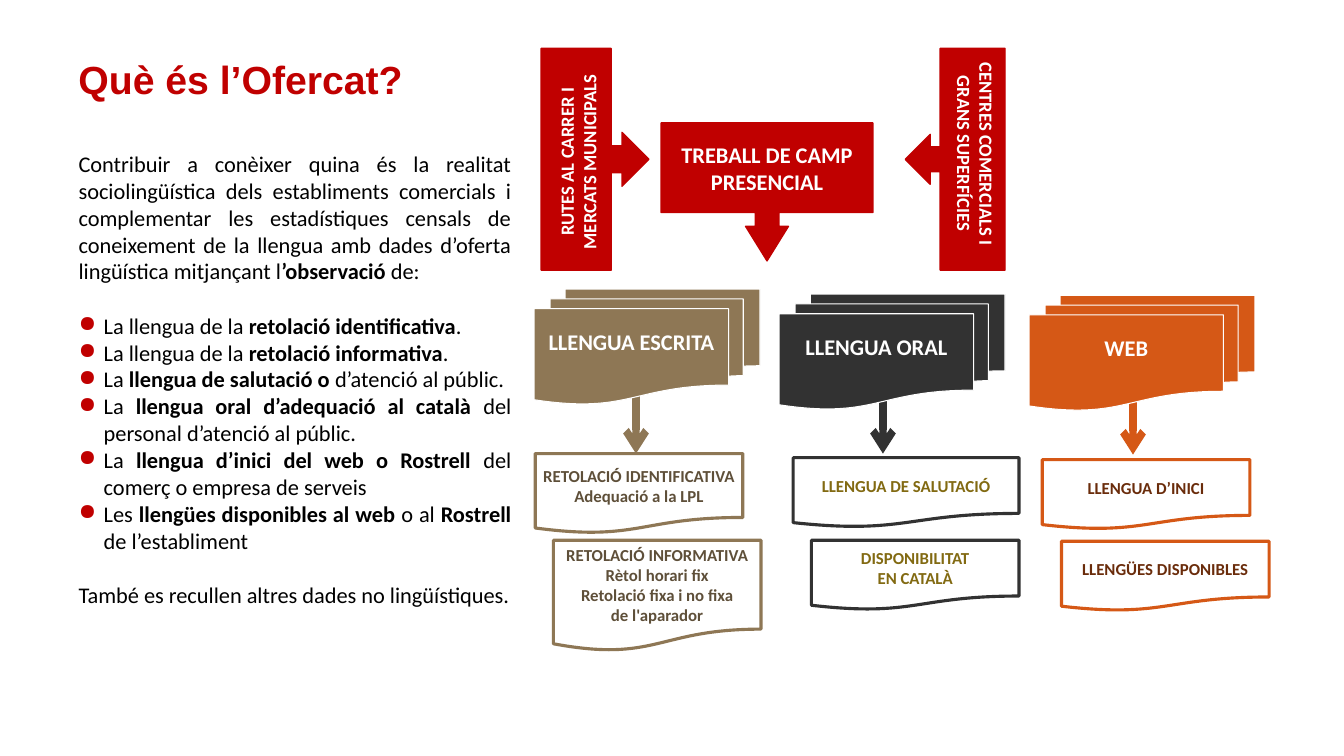
from dataclasses import dataclass

from lxml.etree import SubElement
from pptx import Presentation
from pptx.dml.color import RGBColor
from pptx.enum.shapes import MSO_CONNECTOR, MSO_SHAPE
from pptx.enum.text import MSO_ANCHOR, PP_ALIGN
from pptx.oxml.ns import qn
from pptx.util import Pt

RED = RGBColor(0xC0, 0x00, 0x00)
BLACK = RGBColor(0x00, 0x00, 0x00)
WHITE = RGBColor(0xFF, 0xFF, 0xFF)
BROWN = RGBColor(0x8E, 0x77, 0x55)
DARK_BROWN = RGBColor(0x5E, 0x4F, 0x39)
CHARCOAL = RGBColor(0x32, 0x32, 0x32)
OLIVE = RGBColor(0x82, 0x6A, 0x12)
ORANGE = RGBColor(0xD5, 0x58, 0x16)
DARK_ORANGE = RGBColor(0x6A, 0x2C, 0x0B)

BODY_LINE = 19.5


@dataclass(frozen=True)
class Area:
    left: float
    top: float
    width: float
    height: float

    def lengths(self) -> tuple:
        return Pt(self.left), Pt(self.top), Pt(self.width), Pt(self.height)


@dataclass(frozen=True)
class Document:
    area: Area
    text: str


@dataclass(frozen=True)
class Channel:
    name: str
    left: float
    top: float
    arrow_x: float
    arrow_top: float
    colour: RGBColor
    text_colour: RGBColor
    documents: tuple[Document, ...]


@dataclass(frozen=True)
class Callout:
    kind: MSO_SHAPE
    area: Area
    adjustments: tuple[float, ...] = ()
    text: str = ""


@dataclass(frozen=True)
class SideLabel:
    area: Area
    rotation: int
    text: str


CHANNELS = (
    Channel("LLENGUA ESCRITA", 381.6, 206.6, 454.3, 281.5, BROWN, DARK_BROWN, (
        Document(Area(382.3, 324, 148.3, 56.9),
                 "RETOLACIÓ IDENTIFICATIVA\nAdequació a la LPL"),
        Document(Area(395.3, 385.9, 148.3, 79.2),
                 "RETOLACIÓ INFORMATIVA\nRètol horari fix\n"
                 "Retolació fixa i no fixa\nde l'aparador"),
    )),
    Channel("LLENGUA ORAL", 556.6, 210.2, 630.7, 281.5, CHARCOAL, OLIVE, (
        Document(Area(566.6, 326.9, 161.3, 49.7), "LLENGUA DE SALUTACIÓ"),
        Document(Area(579.6, 385.9, 148.3, 49.7), "DISPONIBILITAT\nEN CATALÀ"),
    )),
    Channel("WEB", 735.1, 211, 809.3, 282.2, ORANGE, DARK_ORANGE, (
        Document(Area(744.5, 328.3, 148.3, 49.7), "LLENGUA D’INICI"),
        Document(Area(758.2, 386.6, 148.3, 49.7), "LLENGÜES DISPONIBLES"),
    )),
)

CALLOUTS = (
    Callout(MSO_SHAPE.DOWN_ARROW_CALLOUT, Area(472.3, 87.8, 151.2, 98.6),
            (0.171, 0.155, 0.25, 0.65), "TREBALL DE CAMP PRESENCIAL"),
    Callout(MSO_SHAPE.RIGHT_ARROW_CALLOUT, Area(386.6, 34.6, 77, 158.4)),
    Callout(MSO_SHAPE.LEFT_ARROW_CALLOUT, Area(646.6, 34.6, 71.3, 158.4)),
)

SIDE_LABELS = (
    SideLabel(Area(331.2, 95.8, 163.4, 39.6), 270,
              "RUTES AL CARRER I\nMERCATS MUNICIPALS"),
    SideLabel(Area(614.9, 90, 163.4, 39.6), 90,
              "CENTRES COMERCIALS I GRANS SUPERFÍCIES"),
)

INTRODUCTION = (
    "Contribuir a conèixer quina és la realitat sociolingüística dels "
    "establiments comercials i complementar les estadístiques censals de "
    "coneixement de la llengua amb dades d’oferta lingüística mitjançant "
    "l*’observació* de:"
)
OBSERVED = (
    "La llengua de la *retolació identificativa*.\n"
    "La llengua de la *retolació informativa*.\n"
    "La *llengua de salutació o *d’atenció al públic.\n"
    "La *llengua oral d’adequació al català *del personal d’atenció al públic.\n"
    "La *llengua d’inici del web o Rostrell *del comerç o empresa de serveis\n"
    "Les *llengües disponibles al web *o al *Rostrell* de l’establiment"
)
CLOSING = "També es recullen altres dades no lingüístiques."


def add_bullet(para) -> None:
    properties = para._p.get_or_add_pPr()
    properties.set("marL", str(Pt(18)))
    properties.set("indent", str(-Pt(18)))
    colour = SubElement(properties, qn("a:buClr"))
    SubElement(colour, qn("a:srgbClr"), val=str(RED))
    SubElement(properties, qn("a:buChar"), char="●")


def write_text(frame, text: str, *, size: float, colour: RGBColor,
               font: str = "Calibri", bold: bool = False,
               align: PP_ALIGN = PP_ALIGN.CENTER, bullet: bool = False,
               space_before: float = 0, line_spacing: float = 1.0) -> None:
    for index, line in enumerate(text.split("\n")):
        para = frame.paragraphs[0] if not frame.text else frame.add_paragraph()
        if bullet:
            add_bullet(para)
        para.alignment = align
        para.line_spacing = line_spacing
        para.space_before = Pt(space_before if index == 0 else 0)
        for position, part in enumerate(line.split("*")):
            if not part:
                continue
            span = para.add_run()
            span.text = part
            span.font.name = font
            span.font.size = Pt(size)
            span.font.bold = bold or position % 2 == 1
            span.font.color.rgb = colour


def add_text_box(page, area: Area):
    box = page.shapes.add_textbox(*area.lengths())
    box.text_frame.word_wrap = True
    return box


def add_box(page, kind: MSO_SHAPE, area: Area, fill: RGBColor,
            line: RGBColor, line_width: float, wrap: bool = False):
    box = page.shapes.add_shape(kind, *area.lengths())
    box.shadow.inherit = False
    box.fill.solid()
    box.fill.fore_color.rgb = fill
    box.line.color.rgb = line
    box.line.width = Pt(line_width)
    box.text_frame.word_wrap = wrap
    box.text_frame.vertical_anchor = MSO_ANCHOR.MIDDLE
    return box


def add_down_arrow(page, x: float, top: float, colour: RGBColor) -> None:
    arrow = page.shapes.add_connector(
        MSO_CONNECTOR.STRAIGHT, Pt(x), Pt(top), Pt(x), Pt(top + 42.5))
    arrow.line.color.rgb = colour
    arrow.line.width = Pt(5.25)
    SubElement(arrow.line._get_or_add_ln(), qn("a:tailEnd"), type="arrow")
    SubElement(arrow._element.spPr, qn("a:effectLst"))


def add_channel(page, channel: Channel) -> None:
    add_down_arrow(page, channel.arrow_x, channel.arrow_top, channel.colour)
    for document in channel.documents:
        box = add_box(page, MSO_SHAPE.FLOWCHART_DOCUMENT, document.area,
                      WHITE, channel.colour, 2.25)
        write_text(box.text_frame, document.text, size=12,
                   colour=channel.text_colour, bold=True)
    card = add_box(page, MSO_SHAPE.FLOWCHART_MULTIDOCUMENT,
                   Area(channel.left, channel.top, 161.3, 82.1),
                   channel.colour, WHITE, 0.75)
    card.text_frame.margin_bottom = Pt(21.6)
    write_text(card.text_frame, channel.name, size=16, colour=WHITE, bold=True)


def main() -> None:
    deck = Presentation()
    deck.slide_width, deck.slide_height = Pt(960), Pt(540)
    page = deck.slides.add_slide(deck.slide_layouts[6])

    title = add_text_box(page, Area(49, 26.6, 828, 64.1)).text_frame
    title.vertical_anchor = MSO_ANCHOR.MIDDLE
    write_text(title, "Què és l’Ofercat?", size=28, colour=RED, font="Arial",
               bold=True, align=PP_ALIGN.LEFT, line_spacing=0.9)

    body = add_text_box(page, Area(49, 103.7, 323.3, 337)).text_frame
    body_format = {"size": 16, "colour": BLACK, "align": PP_ALIGN.JUSTIFY}
    write_text(body, INTRODUCTION, **body_format)
    write_text(body, OBSERVED, bullet=True, space_before=BODY_LINE, **body_format)
    write_text(body, CLOSING, space_before=BODY_LINE, **body_format)

    for channel in CHANNELS:
        add_channel(page, channel)

    for callout in CALLOUTS:
        box = add_box(page, callout.kind, callout.area, RED, RED, 1, wrap=True)
        for index, value in enumerate(callout.adjustments):
            box.adjustments[index] = value
        if callout.text:
            write_text(box.text_frame, callout.text, size=16, colour=WHITE,
                       bold=True)

    for label in SIDE_LABELS:
        box = add_text_box(page, label.area)
        box.rotation = label.rotation
        write_text(box.text_frame, label.text, size=13.3, colour=WHITE, bold=True)

    deck.save("out.pptx")


if __name__ == "__main__":
    main()
